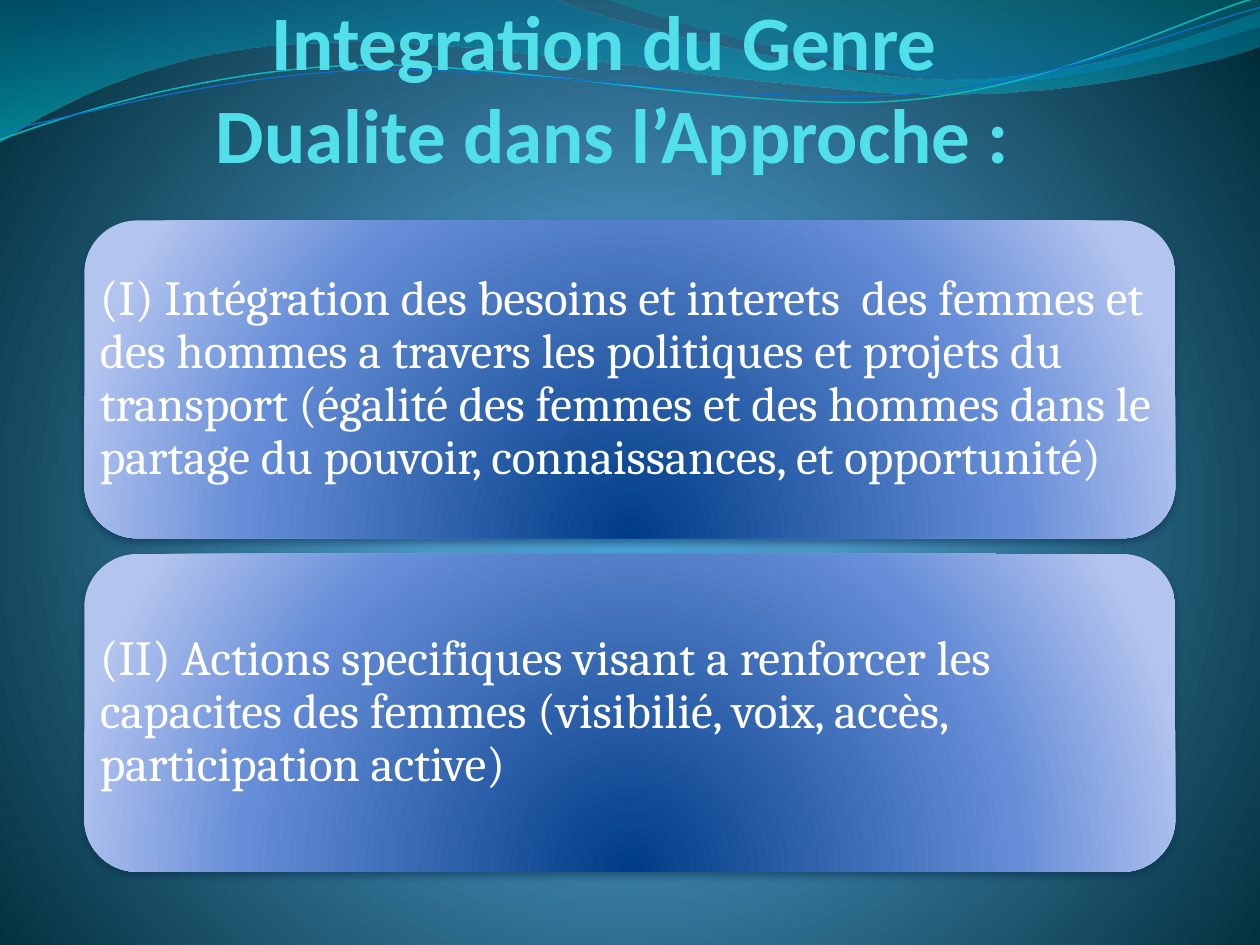
from dataclasses import dataclass
from typing import Optional

from lxml.etree import SubElement
from pptx import Presentation
from pptx.dml.color import RGBColor
from pptx.enum.shapes import MSO_SHAPE
from pptx.enum.text import MSO_ANCHOR, PP_ALIGN
from pptx.oxml.ns import qn
from pptx.util import Pt

WHITE = RGBColor(0xFF, 0xFF, 0xFF)
TITLE_CYAN = RGBColor(0x51, 0xE0, 0xEA)
SHADOW_NAVY = RGBColor(0x04, 0x27, 0x47)
SKY = RGBColor(0x4A, 0xA0, 0xD6)
STEEL = RGBColor(0x4C, 0x98, 0xC7)
DEEP_TEAL = RGBColor(0x00, 0x2C, 0x38)
WAVE_BLUE = RGBColor(0x00, 0x74, 0xA1)
WAVE_AQUA = RGBColor(0x00, 0xC6, 0xCF)
CREST_TEAL = RGBColor(0x00, 0xA1, 0xA9)
CREST_BLUE = RGBColor(0x00, 0x8B, 0xBF)
STRAND_TEAL = RGBColor(0x0A, 0xB8, 0xBF)
STRAND_BLUE = RGBColor(0x0F, 0x6F, 0xC6)
PANEL_NAVY = RGBColor(0x00, 0x3D, 0x87)
PANEL_BLUE = RGBColor(0x66, 0x8D, 0xD7)
PANEL_PALE = RGBColor(0xB3, 0xC4, 0xEF)

STRAND_TILT = 357.3
PANEL_LEFT, PANEL_TOP = 48.2, 126
PANEL_WIDTH, PANEL_HEIGHT, PANEL_PITCH = 623.5, 181.6, 190.6


@dataclass(frozen=True)
class Stop:
    position: int
    color: RGBColor
    opacity: int = 100


@dataclass(frozen=True)
class Gradient:
    """Linear at an angle, or circular around a focus (left, top, right, bottom in %)."""
    stops: tuple
    angle: int = 0
    focus: Optional[tuple] = None


@dataclass(frozen=True)
class Wave:
    """Segments hold one end point, or two control points and an end point."""
    start: tuple
    segments: tuple
    gradient: Optional[Gradient] = None
    line_color: Optional[RGBColor] = None
    line_width: float = 0
    rotation: float = 0


BACKDROP = Gradient((Stop(0, SKY), Stop(25, STEEL), Stop(100, DEEP_TEAL)),
                    focus=(10, 110, 10, 100))
PANEL_GLOW = Gradient((Stop(0, PANEL_NAVY), Stop(68, PANEL_BLUE), Stop(100, PANEL_PALE)),
                      focus=(50, 130, 50, -30))

WAVES = (
    Wave((0, 0), (
        (316.8, -0.7),
        (342.7, 12.2, 478.1, 45.4, 545.8, 45.4),
        (614.2, 45.4, 689.8, 18.7, 720, 6.5),
        (720.7, 25.9),
        (707.8, 31.7, 626.4, 54.7, 537.1, 54),
        (447.8, 54, 275, 20.2, 185, 24.5),
        (92.9, 25.9, 33.1, 59.8, -0.7, 81.4),
        (0, 0),
    ), Gradient((Stop(0, WAVE_BLUE, 45), Stop(100, WAVE_AQUA, 55)), 90)),
    Wave((344.9, -0.7), (
        (366.5, 7.9, 491, 44.6, 553.7, 46.8),
        (616.3, 49.7, 691.9, 23, 720, 15.1),
        (720, 0),
        (344.9, -0.7),
    ), Gradient((Stop(0, CREST_TEAL, 30), Stop(80, CREST_BLUE, 45)), 90)),
    Wave((-1.4, 63), (
        (33.8, 51.7, 114.1, 29.4, 199.8, 29.9),
        (284.9, 30.3, 425.8, 67.3, 512.4, 64.9),
        (599, 62.4, 676.5, 25.7, 720.2, 15.5),
    ), line_color=STRAND_TEAL, line_width=0.85, rotation=STRAND_TILT),
    Wave((-1.1, 58), (
        (32.9, 53.8, 118.3, 32.5, 204.1, 33),
        (290.6, 33.4, 428.9, 63.8, 515.5, 61.4),
        (601.3, 59.6, 678.4, 30.1, 721.4, 21.3),
    ), line_color=STRAND_BLUE, line_width=0.75, rotation=STRAND_TILT),
)

APPROACHES = (
    "(I) Intégration des besoins et interets  des femmes et des hommes a travers "
    "les politiques et projets du transport (égalité des femmes et des hommes dans "
    "le partage du pouvoir, connaissances, et opportunité)",
    "(II) Actions specifiques visant a renforcer les capacites des femmes "
    "(visibilié, voix, accès, participation active)",
)


def add_color(parent, color: RGBColor, opacity: int) -> None:
    tint = SubElement(parent, qn("a:srgbClr"), val=str(color))
    if opacity < 100:
        SubElement(tint, qn("a:alpha"), val=str(opacity * 1000))


def apply_gradient(owner, fill, gradient: Gradient) -> None:
    """Fill the owner (slide or shape) with stops that may be translucent."""
    fill.gradient()
    element = owner.element.xpath(".//a:gradFill")[0]
    for child in list(element):
        element.remove(child)
    stop_list = SubElement(element, qn("a:gsLst"))
    for stop in gradient.stops:
        mark = SubElement(stop_list, qn("a:gs"), pos=str(stop.position * 1000))
        add_color(mark, stop.color, stop.opacity)
    if gradient.focus:
        circle = SubElement(element, qn("a:path"), path="circle")
        sides = {side: str(value * 1000) for side, value in zip("ltrb", gradient.focus)}
        SubElement(circle, qn("a:fillToRect"), **sides)
    else:
        SubElement(element, qn("a:lin"), ang=str(gradient.angle * 60000), scaled="0")


def bend_segments(ribbon, segments: tuple) -> None:
    """Merge each run of three straight steps that stands for a curve into one Bézier."""
    steps = iter(ribbon.element.xpath(".//a:lnTo"))
    for segment in segments:
        first = next(steps)
        if len(segment) == 6:
            first.tag = qn("a:cubicBezTo")
            for step in (next(steps), next(steps)):
                first.append(step[0])
                step.getparent().remove(step)


def draw_wave(slide, wave: Wave) -> None:
    points = [(Pt(x), Pt(y)) for segment in wave.segments
              for x, y in zip(segment[::2], segment[1::2])]
    builder = slide.shapes.build_freeform(Pt(wave.start[0]), Pt(wave.start[1]))
    builder.add_line_segments(points, close=wave.gradient is not None)
    ribbon = builder.convert_to_shape()
    bend_segments(ribbon, wave.segments)
    ribbon.rotation = wave.rotation
    ribbon.shadow.inherit = False
    if wave.gradient:
        apply_gradient(ribbon, ribbon.fill, wave.gradient)
        ribbon.line.fill.background()
    else:
        ribbon.fill.background()
        ribbon.line.color.rgb = wave.line_color
        ribbon.line.width = Pt(wave.line_width)


def write_text(shape, text: str, *, font: str, size: float, color: RGBColor,
               bold: bool = False, align=PP_ALIGN.LEFT, anchor=MSO_ANCHOR.MIDDLE,
               spacing: float = 1.0) -> None:
    frame = shape.text_frame
    frame.word_wrap = True
    frame.vertical_anchor = anchor
    frame.margin_left = frame.margin_right = Pt(0)
    frame.margin_top = frame.margin_bottom = Pt(0)
    paragraph = frame.paragraphs[0]
    paragraph.text = text
    paragraph.alignment = align
    paragraph.line_spacing = spacing
    for run in paragraph.runs:
        run.font.name = font
        run.font.size = Pt(size)
        run.font.bold = bold
        run.font.color.rgb = color


def draw_panel(slide, top: float, text: str) -> None:
    panel = slide.shapes.add_shape(MSO_SHAPE.ROUNDED_RECTANGLE, Pt(PANEL_LEFT), Pt(top),
                                   Pt(PANEL_WIDTH), Pt(PANEL_HEIGHT))
    apply_gradient(panel, panel.fill, PANEL_GLOW)
    panel.line.fill.background()
    panel.shadow.inherit = False
    effects = panel.element.xpath(".//a:effectLst")[0]
    shadow = SubElement(effects, qn("a:outerShdw"), blurRad=str(Pt(4.5)), dist=str(Pt(3)),
                        dir=str(90 * 60000), rotWithShape="0")
    add_color(shadow, SHADOW_NAVY, 48)
    write_text(panel, text, font="Cambria", size=28, color=WHITE, spacing=0.9)


def main() -> None:
    deck = Presentation()
    deck.slide_width, deck.slide_height = Pt(720), Pt(540)
    slide = deck.slides.add_slide(deck.slide_layouts[6])
    apply_gradient(slide, slide.background.fill, BACKDROP)
    for wave in WAVES:
        draw_wave(slide, wave)
    title = slide.shapes.add_textbox(Pt(41.4), Pt(48), Pt(618.2), Pt(54))
    write_text(title, "Integration du Genre \vDualite dans l’Approche :", font="Calibri",
               size=44, color=TITLE_CYAN, bold=True, align=PP_ALIGN.CENTER,
               anchor=MSO_ANCHOR.BOTTOM)
    for row, approach in enumerate(APPROACHES):
        draw_panel(slide, PANEL_TOP + row * PANEL_PITCH, approach)
    deck.save("out.pptx")


if __name__ == "__main__":
    main()
